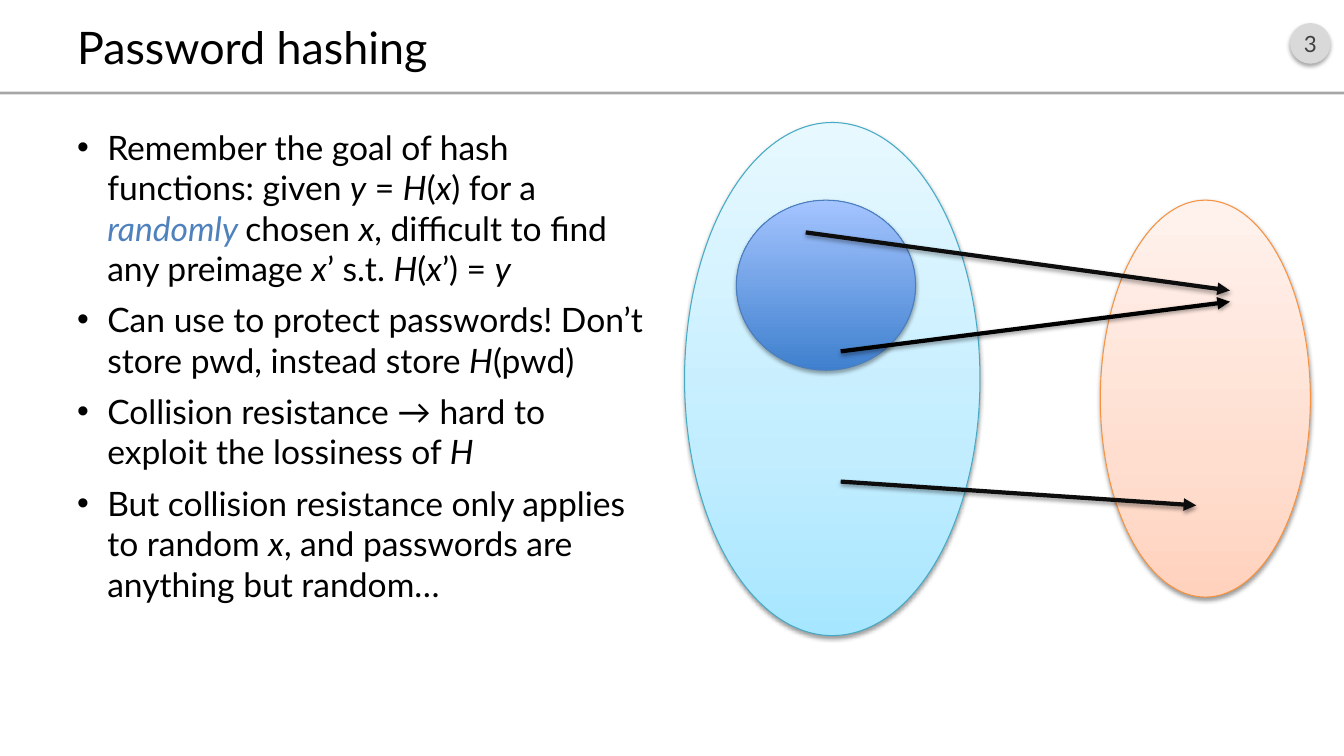
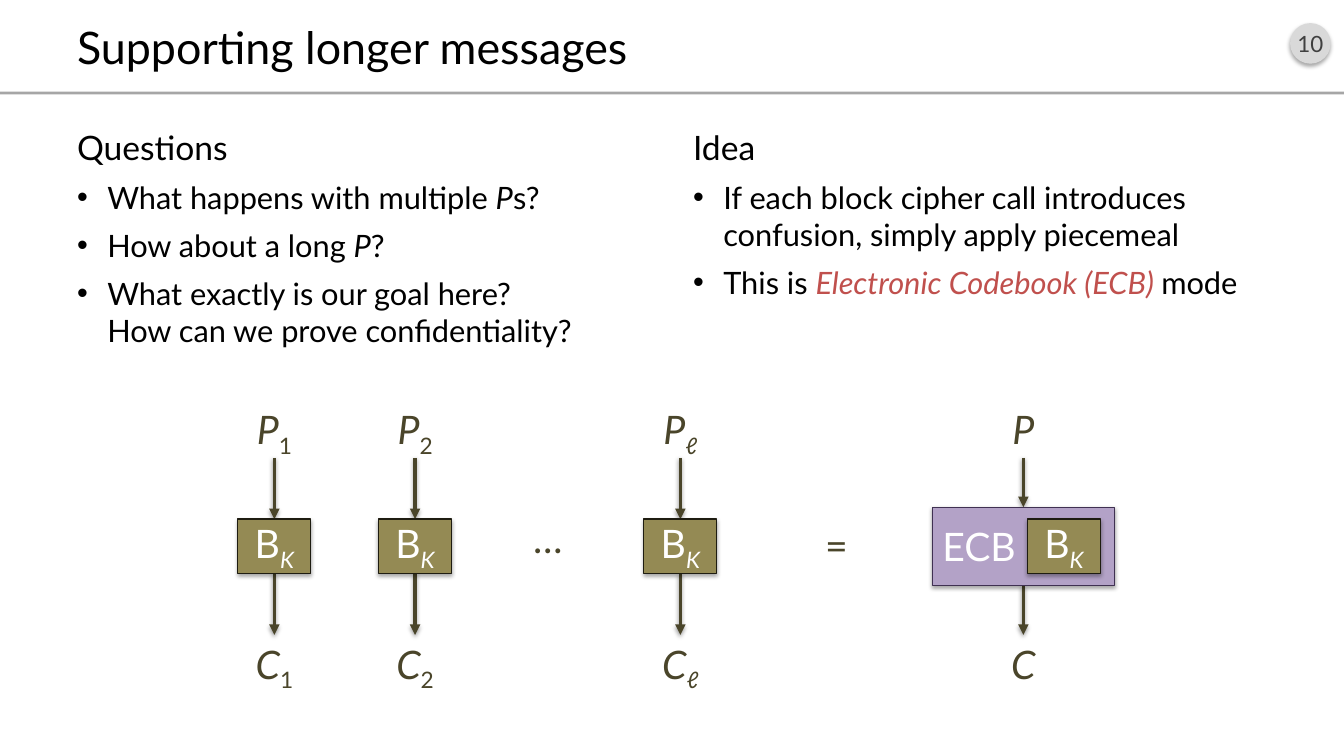
from lxml import etree
from pptx import Presentation
from pptx.dml.color import RGBColor
from pptx.enum import shapes, text
from pptx.oxml import ns
from pptx.util import Pt

FONT = "Lato"
BLACK = RGBColor(0x00, 0x00, 0x00)
NEAR_BLACK = RGBColor(0x0D, 0x0D, 0x0D)
WHITE = RGBColor(0xFF, 0xFF, 0xFF)
BADGE_GREY = RGBColor(0xD9, 0xD9, 0xD9)
BADGE_TEXT = RGBColor(0x40, 0x40, 0x40)
RULE_GREY = RGBColor(0xA6, 0xA6, 0xA6)
BLUE = RGBColor(0x4F, 0x81, 0xBD)
RED = RGBColor(0xC0, 0x50, 0x4D)
OLIVE = RGBColor(0x94, 0x8A, 0x54)
OLIVE_EDGE = RGBColor(0x1E, 0x1C, 0x11)
OLIVE_DARK = RGBColor(0x4A, 0x45, 0x2A)
PURPLE = RGBColor(0xB3, 0xA2, 0xC7)
PURPLE_EDGE = RGBColor(0x40, 0x31, 0x52)
TEAL_EDGE = RGBColor(0x46, 0xAA, 0xC5)
BLUE_EDGE = RGBColor(0x4B, 0x7E, 0xBC)
ORANGE_EDGE = RGBColor(0xF6, 0x92, 0x40)

# Gradients: (percent, colour) from bottom to top
AQUA = [(0, RGBColor(0xA7, 0xE6, 0xFF)), (35, RGBColor(0xC1, 0xED, 0xFF)),
        (100, RGBColor(0xE7, 0xF8, 0xFF))]
PEACH = [(0, RGBColor(0xFF, 0xD2, 0xBD)), (35, RGBColor(0xFF, 0xDE, 0xD0)),
         (100, RGBColor(0xFF, 0xF2, 0xED))]
ROYAL = [(0, RGBColor(0x3F, 0x80, 0xCE)), (100, RGBColor(0xA4, 0xC4, 0xFF))]

# Shadows: (opacity percent, distance)
STRONG = (35, 1.8)
SOFT = (38, 1.6)

WIDTH, HEIGHT = 960, 540
MARGIN = 48
BODY_TOP, BODY_W, BODY_H = 87, 424, 414
COLUMN_2 = 488
LABEL_W, LABEL_H = 64, 41
BLOCK_W, BLOCK_H = 52, 39


# XML helpers
def node(parent, tag, **attributes):
    child = etree.SubElement(parent, ns.qn(tag))
    for key, value in attributes.items():
        child.set(key, str(value))
    return child


def set_shadow(item, shadow):
    effects = node(item._element.spPr, "a:effectLst")
    if shadow:
        opacity, distance = shadow
        outer = node(effects, "a:outerShdw", blurRad=Pt(3.1), dist=Pt(distance),
                     dir=5400000, rotWithShape=0)
        colour = node(outer, "a:srgbClr", val=BLACK)
        node(colour, "a:alpha", val=opacity * 1000)


def set_gradient(shape, stops):
    gradient = node(shape._element.spPr, "a:gradFill", rotWithShape=1)
    stop_list = node(gradient, "a:gsLst")
    for percent, colour in stops:
        stop = node(stop_list, "a:gs", pos=percent * 1000)
        node(stop, "a:srgbClr", val=colour)
    node(gradient, "a:lin", ang=16200000, scaled=0)


# Text: a run is a plain string or (string, style)
def it(words, colour=None):
    return words, {"italic": True, "colour": colour}


def sub(words, italic=False):
    return words, {"italic": italic, "subscript": True}


def add_runs(paragraph, runs, size, colour):
    for entry in runs:
        words, style = (entry, {}) if isinstance(entry, str) else entry
        for number, line in enumerate(words.split("\n")):
            if number:
                paragraph.add_line_break()
            run = paragraph.add_run()
            run.text = line
            run.font.name = FONT
            run.font.size = Pt(size)
            run.font.italic = style.get("italic", False)
            run.font.color.rgb = style.get("colour") or colour
            if style.get("subscript"):
                run._r.get_or_add_rPr().set("baseline", "-25000")


def add_text(slide, box, runs, size, colour, align=None, anchor=None):
    frame = slide.shapes.add_textbox(*map(Pt, box)).text_frame
    frame.word_wrap = True
    frame.vertical_anchor = anchor or text.MSO_ANCHOR.TOP
    frame.paragraphs[0].alignment = align
    add_runs(frame.paragraphs[0], runs, size, colour)


def body_column(slide, left, bullets, size, heading=None):
    box = (left, BODY_TOP, BODY_W, BODY_H)
    frame = slide.shapes.add_textbox(*map(Pt, box)).text_frame
    frame.word_wrap = True
    paragraph = frame.paragraphs[0]
    if heading:
        add_runs(paragraph, [heading], 24, BLACK)
    for number, runs in enumerate(bullets):
        if number or heading:
            paragraph = frame.add_paragraph()
        paragraph.space_before = Pt(8)
        properties = paragraph._p.get_or_add_pPr()
        properties.set("marL", str(Pt(21.6)))
        properties.set("indent", str(-Pt(21.6)))
        node(properties, "a:buFont", typeface="Arial")
        node(properties, "a:buChar", char="•")
        add_runs(paragraph, runs, size, BLACK)


# Shapes
def add_shape(slide, kind, box, fill, edge=None, shadow=None):
    shape = slide.shapes.add_shape(kind, *map(Pt, box))
    if isinstance(fill, list):
        set_gradient(shape, fill)
    else:
        shape.fill.solid()
        shape.fill.fore_color.rgb = fill
    if edge is None:
        shape.line.fill.background()
    else:
        shape.line.color.rgb = edge
        shape.line.width = Pt(0.75)
    set_shadow(shape, shadow)
    return shape


def fill_shape_text(shape, runs, size, colour, align=text.PP_ALIGN.CENTER):
    frame = shape.text_frame
    frame.vertical_anchor = text.MSO_ANCHOR.MIDDLE
    frame.paragraphs[0].alignment = align
    add_runs(frame.paragraphs[0], runs, size, colour)


def add_arrow(slide, start, end, colour, width):
    arrow = slide.shapes.add_connector(
        shapes.MSO_CONNECTOR.STRAIGHT, *map(Pt, start + end))
    arrow.line.color.rgb = colour
    arrow.line.width = Pt(width)
    node(arrow.line._get_or_add_ln(), "a:tailEnd", type="triangle")
    set_shadow(arrow, SOFT)


# Shared frame: number badge, rule and title
def base_slide(deck, number, title):
    slide = deck.slides.add_slide(deck.slide_layouts[6])
    badge = add_shape(slide, shapes.MSO_SHAPE.OVAL, (921.5, 16.5, 29, 29),
                      BADGE_GREY, shadow=STRONG)
    badge.text_frame.margin_left = badge.text_frame.margin_right = 0
    fill_shape_text(badge, [str(number)], 16, BADGE_TEXT)
    add_shape(slide, shapes.MSO_SHAPE.RECTANGLE, (0, 65.5, WIDTH, 2), RULE_GREY)
    add_text(slide, (MARGIN, 11.5, 864, 43), [title], 32, BLACK,
             anchor=text.MSO_ANCHOR.MIDDLE)
    return slide


# Hash function drawn as a map between two sets
def hash_map(slide, left, top):
    sets = [
        ((0, 0, 211, 366.5), AQUA, TEAL_EDGE, SOFT),
        ((37, 55.5, 128, 121.5), ROYAL, BLUE_EDGE, STRONG),
        ((297, 55.5, 150, 283.5), PEACH, ORANGE_EDGE, SOFT),
    ]
    for (x, y, w, h), fill, edge, shadow in sets:
        add_shape(slide, shapes.MSO_SHAPE.OVAL, (left + x, top + y, w, h),
                  fill, edge, shadow)
    mappings = [
        ((86.5, 78.5), (389.5, 120), NEAR_BLACK),
        ((111.5, 163.5), (389.5, 128), BLACK),
        ((111.5, 256.5), (365.5, 273.5), NEAR_BLACK),
    ]
    for (x1, y1), (x2, y2), colour in mappings:
        add_arrow(slide, (left + x1, top + y1), (left + x2, top + y2), colour, 3)


# Block cipher diagram
def diagram_label(slide, centre, top, runs):
    add_text(slide, (centre - LABEL_W / 2, top, LABEL_W, LABEL_H), runs, 28,
             OLIVE_DARK, text.PP_ALIGN.CENTER)


def cipher_block(slide, left, middle):
    block = add_shape(slide, shapes.MSO_SHAPE.RECTANGLE,
                      (left, middle - BLOCK_H / 2, BLOCK_W, BLOCK_H),
                      OLIVE, OLIVE_EDGE, STRONG)
    fill_shape_text(block, ["B", sub("K", italic=True)], 28, WHITE)


def data_flow(slide, centre, top, bottom, box_height, index=""):
    """Plaintext and ciphertext labels, with arrows into and out of a box."""
    middle = (top + bottom) / 2
    half = box_height / 2
    upper, lower = top + LABEL_H, bottom - LABEL_H
    add_arrow(slide, (centre, upper), (centre, middle - half), OLIVE_DARK, 2.5)
    add_arrow(slide, (centre, middle + half), (centre, lower), OLIVE_DARK, 2.5)
    for letter, y in (("P", top), ("C", lower)):
        diagram_label(slide, centre, y, [it(letter)] + ([sub(index)] if index else []))


def ecb_diagram(slide, left, top, bottom):
    middle = (top + bottom) / 2
    centres = [left + offset for offset in (32, 132.5, 322)]
    for centre, index in zip(centres, "12ℓ"):
        data_flow(slide, centre, top, bottom, BLOCK_H, index)
        cipher_block(slide, centre - BLOCK_W / 2, middle)
    diagram_label(slide, (centres[1] + centres[2]) / 2, top + 78, ["…"])
    diagram_label(slide, left + 433.5, top + 83, ["="])

    # Combined mode box
    mode_left, mode_w, mode_h = left + 502, 130, 56
    data_flow(slide, mode_left + mode_w / 2, top, bottom, mode_h)
    mode = add_shape(slide, shapes.MSO_SHAPE.RECTANGLE,
                     (mode_left, middle - mode_h / 2, mode_w, mode_h),
                     PURPLE, PURPLE_EDGE, STRONG)
    fill_shape_text(mode, ["ECB"], 28, WHITE, text.PP_ALIGN.LEFT)
    cipher_block(slide, mode_left + mode_w - BLOCK_W - 10, middle)


def hashing_slide(deck):
    slide = base_slide(deck, 3, "Password hashing")
    body_column(slide, MARGIN, [
        ["Remember the goal of hash functions: given ", it("y"), " = ", it("H"),
         "(", it("x"), ") for a ", it("randomly ", BLUE), "chosen ", it("x"),
         ", difficult to find any preimage ", it("x"), "’ s.t. ", it("H"), "(",
         it("x"), "’) = ", it("y")],
        ["Can use to protect passwords! Don’t store pwd, instead store ",
         it("H"), "(pwd)"],
        ["Collision resistance → hard to exploit the lossiness of ", it("H")],
        ["But collision resistance only applies to random ", it("x"),
         ", and passwords are anything but random…"],
    ], 24)
    hash_map(slide, 489, 87.5)


def messages_slide(deck):
    slide = base_slide(deck, 10, "Supporting longer messages")
    body_column(slide, MARGIN, [
        ["What happens with multiple ", it("P"), "s?"],
        ["How about a long ", it("P"), "?"],
        ["What exactly is our goal here?\nHow can we prove confidentiality?"],
    ], 22, "Questions")
    body_column(slide, COLUMN_2, [
        ["If each block cipher call introduces confusion, simply apply piecemeal"],
        ["This is ", it("Electronic Codebook (ECB) ", RED), "mode"],
    ], 22, "Idea")
    ecb_diagram(slide, 164, 286, 494.5)


def main():
    deck = Presentation()
    deck.slide_width, deck.slide_height = Pt(WIDTH), Pt(HEIGHT)
    hashing_slide(deck)
    messages_slide(deck)
    deck.save("out.pptx")


if __name__ == "__main__":
    main()
